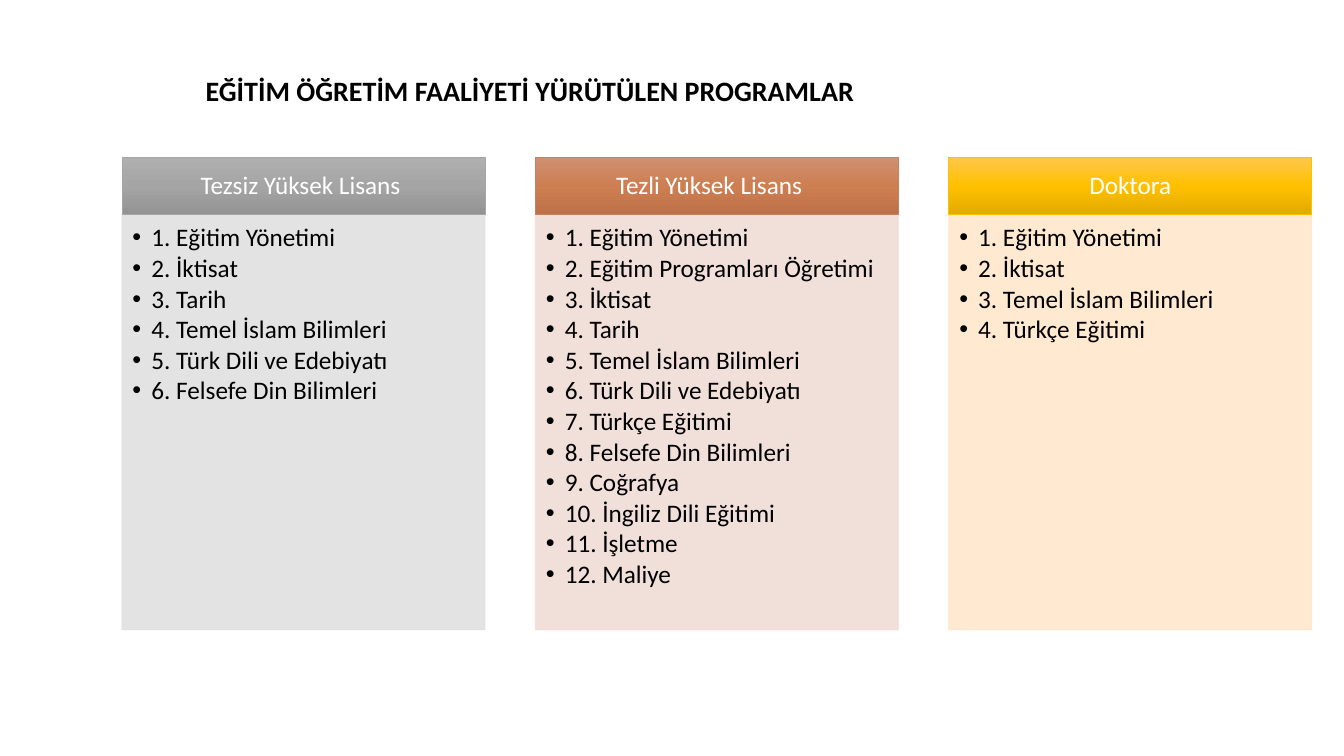
from copy import deepcopy

from lxml.etree import SubElement
from pptx import Presentation
from pptx.dml.color import RGBColor
from pptx.enum.shapes import MSO_SHAPE
from pptx.enum.text import MSO_ANCHOR, MSO_AUTO_SIZE, PP_ALIGN
from pptx.oxml.ns import qn
from pptx.util import Pt

LEFT, STEP, WIDTH = 87.1, 295.3, 259.3
HEAD_TOP, HEAD_TALL = 112.3, 41
LIST_TOP, LIST_TALL = 153.3, 296.6

# Heading, gradient, edge, list fill, programs
COLUMNS = [
    ("Tezsiz Yüksek Lisans ", ("AFAFAF", "A5A5A5", "939393"), "A5A5A5", "E1E1E1",
     ["Eğitim Yönetimi", "İktisat", "Tarih", "Temel İslam Bilimleri",
      "Türk Dili ve Edebiyatı", "Felsefe Din Bilimleri"]),
    ("Tezli Yüksek Lisans \t", ("CF9072", "CE7F52", "BD7147"), "C9805C", "F0DCD5",
     ["Eğitim Yönetimi", "Eğitim Programları Öğretimi", "İktisat", "Tarih",
      "Temel İslam Bilimleri", "Türk Dili ve Edebiyatı", "Türkçe Eğitimi",
      "Felsefe Din Bilimleri", "Coğrafya", "İngiliz Dili Eğitimi", "İşletme",
      "Maliye"]),
    ("Doktora", ("FFC74B", "FFC000", "E3AB00"), "FFC000", "FFE7CB",
     ["Eğitim Yönetimi", "İktisat", "Temel İslam Bilimleri", "Türkçe Eğitimi"]),
]


def color(code):
    return RGBColor.from_string(code)


def place(shape, left, top, width, height):
    shape.left, shape.top = Pt(left), Pt(top)
    shape.width, shape.height = Pt(width), Pt(height)


def bullet(para):
    props = para._p.get_or_add_pPr()
    props.set("marL", str(Pt(13.5)))
    props.set("indent", str(-Pt(13.5)))
    SubElement(props, qn("a:buFont"), typeface="Arial")
    SubElement(props, qn("a:buChar"), char="•")


def write(shape, lines, size=18, ink="000000", bold=False, align=PP_ALIGN.LEFT,
          anchor=MSO_ANCHOR.TOP, inset=(7.2, 3.6, 7.2, 3.6), spacing=0.9,
          after=0, dots=False):
    frame = shape.text_frame
    frame.word_wrap = True
    frame.auto_size = MSO_AUTO_SIZE.NONE
    frame.vertical_anchor = anchor
    frame.margin_left, frame.margin_top, frame.margin_right, frame.margin_bottom = map(Pt, inset)
    for i, line in enumerate(lines):
        para = frame.add_paragraph() if i else frame.paragraphs[0]
        if dots:
            para.level = 1
            bullet(para)
        para.alignment = align
        para.line_spacing = spacing
        para.space_before, para.space_after = Pt(0), Pt(after)
        run = para.add_run()
        run.text = line
        font = run.font
        font.name, font.size, font.bold = "Calibri", Pt(size), bold
        font.color.rgb = color(ink)


def edge(shape, code):
    shape.line.color.rgb = color(code)
    shape.line.width = Pt(0.5)


def shade(shape, codes):
    shape.fill.gradient()
    shape.fill.gradient_angle = 270
    stops = shape._element.spPr.find(qn("a:gradFill")).find(qn("a:gsLst"))
    stops.append(deepcopy(stops[0]))
    for i, stop in enumerate(shape.fill.gradient_stops):
        stop.position = i / 2
        stop.color.rgb = color(codes[i])


def tint(shape, code):
    shape.fill.solid()
    shape.fill.fore_color.rgb = color(code)
    edge(shape, code)
    for part in shape._element.spPr.iter(qn("a:srgbClr")):
        SubElement(part, qn("a:alpha"), val="90000")


def header(slide, left, text, codes, rim):
    shape = slide.shapes.add_shape(MSO_SHAPE.RECTANGLE, Pt(left), Pt(HEAD_TOP),
                                   Pt(WIDTH), Pt(HEAD_TALL))
    shape.shadow.inherit = False
    shade(shape, codes)
    edge(shape, rim)
    write(shape, [text], ink="FFFFFF", align=PP_ALIGN.CENTER,
          anchor=MSO_ANCHOR.MIDDLE, inset=(10, 5.8, 10, 5.8))


def programs(body, left, names, code):
    place(body, left, LIST_TOP, WIDTH, LIST_TALL)
    tint(body, code)
    lines = [f"{i}. {name}" for i, name in enumerate(names, 1)]
    write(body, lines, inset=(7.5, 7.5, 10, 11.3), after=2.4, dots=True)


def main():
    deck = Presentation()
    deck.slide_width, deck.slide_height = Pt(960), Pt(540)
    # The comparison layout has a title and four bodies
    slide = deck.slides.add_slide(deck.slide_layouts[4])
    title, *bodies, spare = list(slide.placeholders)
    spare._element.getparent().remove(spare._element)

    # Title
    place(title, 139.7, 49, 533, 31.5)
    write(title, ["EĞİTİM ÖĞRETİM FAALİYETİ YÜRÜTÜLEN PROGRAMLAR"],
          size=20, bold=True, spacing=1)

    # Columns
    for i, (head, codes, rim, code, names) in enumerate(COLUMNS):
        left = LEFT + i * STEP
        header(slide, left, head, codes, rim)
        programs(bodies[i], left, names, code)

    deck.save("out.pptx")


if __name__ == "__main__":
    main()
